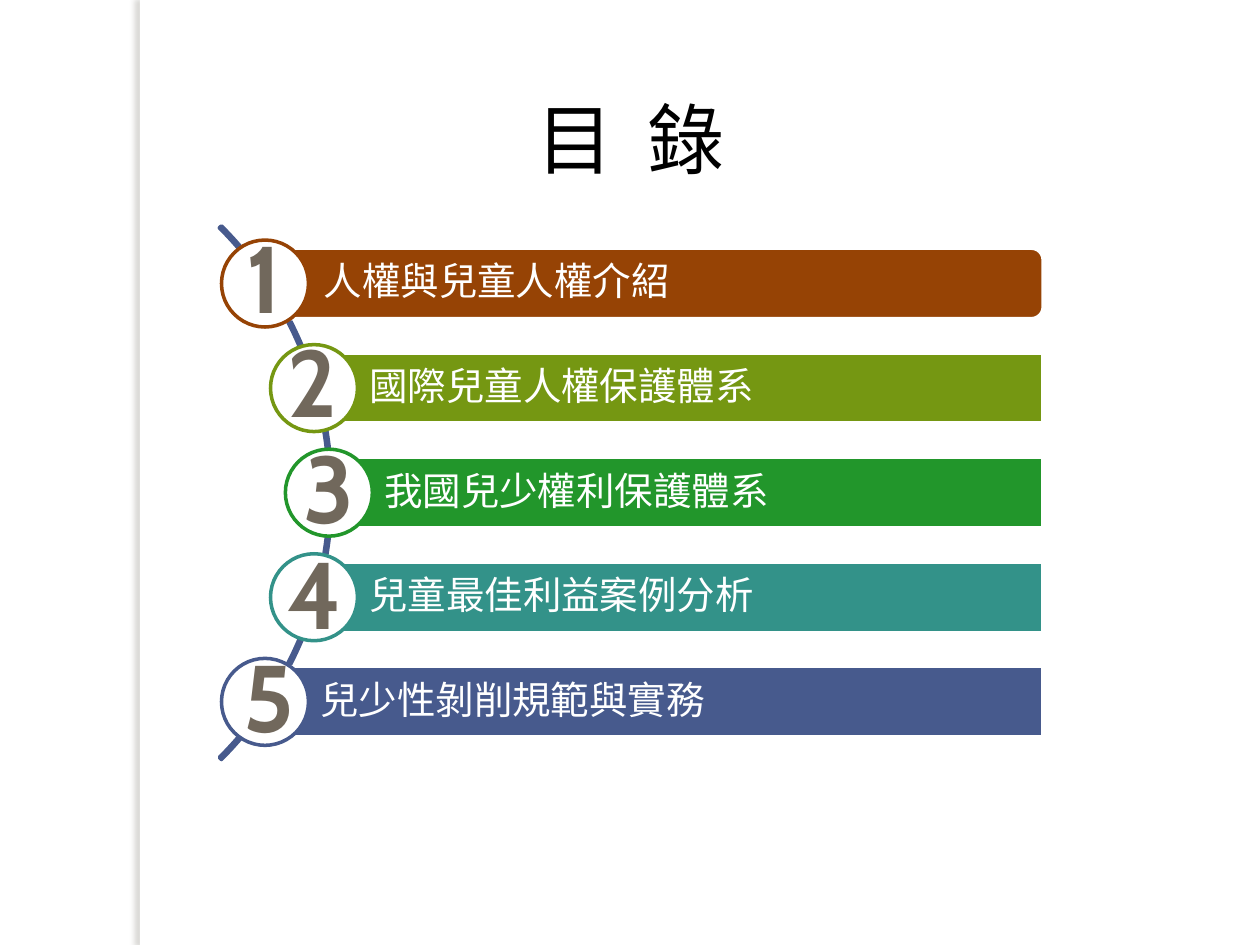
from dataclasses import dataclass
from math import sqrt

from lxml.etree import SubElement
from pptx import Presentation
from pptx.dml.color import RGBColor
from pptx.enum.shapes import MSO_SHAPE as Shape
from pptx.enum.text import MSO_ANCHOR as Anchor, MSO_AUTO_SIZE as AutoSize, PP_ALIGN as Align
from pptx.oxml import parse_xml
from pptx.oxml.ns import nsdecls, qn
from pptx.util import Inches, Pt


@dataclass(frozen=True)
class Theme:
    white: str = "FFFFFF"
    black: str = "000000"
    digit: str = "71685C"
    digit_outline: str = "FEFEFE"
    shadow: str = "736F63"
    arc: str = "475A8D"
    text_font: str = "Noto Sans CJK SC"
    digit_font: str = "Cabin"
    title_size: int = 44
    item_size: int = 22
    digit_size: int = 54
    line_width: int = 2


THEME = Theme()

ITEMS = [
    ("人權與兒童人權介紹", "964305", Shape.ROUNDED_RECTANGLE, (-0.01, -0.06)),
    ("國際兒童人權保護體系", "759712", Shape.RECTANGLE, (-0.01, -0.06)),
    ("我國兒少權利保護體系", "22962B", Shape.RECTANGLE, (0, -0.05)),
    ("兒童最佳利益案例分析", "339289", Shape.RECTANGLE, (0.01, -0.04)),
    ("兒少性剝削規範與實務", "475A8D", Shape.RECTANGLE, (0.03, -0.05)),
]

ARC_X, ARC_Y = -0.36, 3.91
ARC_DIAMETER = 5.99
TRACK_RADIUS = 2.97
ROW_STEP = 0.83
BAR_RIGHT, BAR_HEIGHT = 8.28, 0.56
CIRCLE_SIZE = 0.69
DIGIT_WIDTH, DIGIT_HEIGHT = 0.65, 1.01


def rgb(color):
    return RGBColor.from_string(color)


def write_text(shape, text, *, size, font, color, bold=None, align=Align.LEFT,
               anchor=Anchor.TOP, wrap=True, fit=AutoSize.NONE, insets=None,
               line_spacing=None, space_after=None, outline=None):
    frame = shape.text_frame
    frame.word_wrap = wrap
    frame.auto_size = fit
    frame.vertical_anchor = anchor
    if insets:
        (frame.margin_left, frame.margin_top,
         frame.margin_right, frame.margin_bottom) = map(Inches, insets)
    paragraph = frame.paragraphs[0]
    paragraph.alignment = align
    paragraph.line_spacing = line_spacing
    paragraph.space_after = space_after
    run = paragraph.add_run()
    run.text = text
    run.font.size = Pt(size)
    run.font.bold = bold
    run.font.name = font
    run.font.color.rgb = rgb(color)
    properties = run.font._element
    east_asian = SubElement(properties, qn("a:ea"), typeface=font)
    properties.find(qn("a:latin")).addnext(east_asian)
    if outline:
        properties.insert(0, parse_xml(
            f'<a:ln {nsdecls("a")} w="{Pt(1.5)}"><a:solidFill>'
            f'<a:srgbClr val="{outline}"/></a:solidFill></a:ln>'))


def add_block(slide, kind, left, top, width, height, fill=None, line=None):
    shape = slide.shapes.add_shape(kind, *map(Inches, (left, top, width, height)))
    shape.shadow.inherit = False
    if fill:
        shape.fill.solid()
        shape.fill.fore_color.rgb = rgb(fill)
    else:
        shape.fill.background()
    if line:
        shape.line.color.rgb = rgb(line)
        shape.line.width = Pt(THEME.line_width)
    else:
        shape.line.fill.background()
    return shape


def add_edge(slide):
    edge = add_block(slide, Shape.RECTANGLE, 1.11, 0, 0.08, 7.5, fill=THEME.white)
    effects = edge._element.spPr.find(qn("a:effectLst"))
    effects.append(parse_xml(
        f'<a:outerShdw {nsdecls("a")} blurRad="{Pt(3)}" dist="{Pt(3)}" dir="10800000" '
        f'algn="ctr" rotWithShape="0"><a:srgbClr val="{THEME.shadow}">'
        '<a:alpha val="25000"/></a:srgbClr></a:outerShdw>'))


def add_arc(slide):
    radius = ARC_DIAMETER / 2
    arc = add_block(slide, Shape.BLOCK_ARC, ARC_X - radius, ARC_Y - radius,
                    ARC_DIAMETER, ARC_DIAMETER, line=THEME.arc)
    for index, value in enumerate((189, 27, 0.004)):
        arc.adjustments[index] = value


def add_title(slide):
    title = slide.shapes.title
    title.left, title.top, title.width, title.height = map(Inches, (3.39, 0.68, 3.23, 1.01))
    write_text(title, "目  錄", size=THEME.title_size, font=THEME.text_font,
               color=THEME.black, align=Align.CENTER)


def add_item(slide, index, text, color, bar_kind, nudge):
    offset = (index - (len(ITEMS) - 1) / 2) * ROW_STEP
    x = ARC_X + sqrt(TRACK_RADIUS ** 2 - offset ** 2)
    y = ARC_Y + offset

    bar = add_block(slide, bar_kind, x, y - BAR_HEIGHT / 2, BAR_RIGHT - x, BAR_HEIGHT,
                    fill=color, line=THEME.white)
    write_text(bar, text, size=THEME.item_size, font=THEME.text_font, color=THEME.white,
               anchor=Anchor.MIDDLE, insets=(0.44, 0.06, 0.06, 0.06),
               line_spacing=0.9, space_after=Pt(7.7))

    add_block(slide, Shape.OVAL, x - CIRCLE_SIZE / 2, y - CIRCLE_SIZE / 2,
              CIRCLE_SIZE, CIRCLE_SIZE, fill=THEME.white, line=color)

    shift_x, shift_y = nudge
    digit = slide.shapes.add_textbox(
        Inches(x + shift_x - DIGIT_WIDTH / 2), Inches(y + shift_y - DIGIT_HEIGHT / 2),
        Inches(DIGIT_WIDTH), Inches(DIGIT_HEIGHT))
    write_text(digit, str(index + 1), size=THEME.digit_size, font=THEME.digit_font,
               color=THEME.digit, bold=True, align=Align.CENTER, wrap=False,
               fit=AutoSize.SHAPE_TO_FIT_TEXT, outline=THEME.digit_outline)


def main():
    presentation = Presentation()
    presentation.slide_width, presentation.slide_height = Inches(10), Inches(7.5)
    slide = presentation.slides.add_slide(presentation.slide_layouts[5])
    slide.background.fill.solid()
    slide.background.fill.fore_color.rgb = rgb(THEME.white)
    add_edge(slide)
    add_arc(slide)
    for index, item in enumerate(ITEMS):
        add_item(slide, index, *item)
    add_title(slide)
    presentation.save("out.pptx")


if __name__ == "__main__":
    main()
